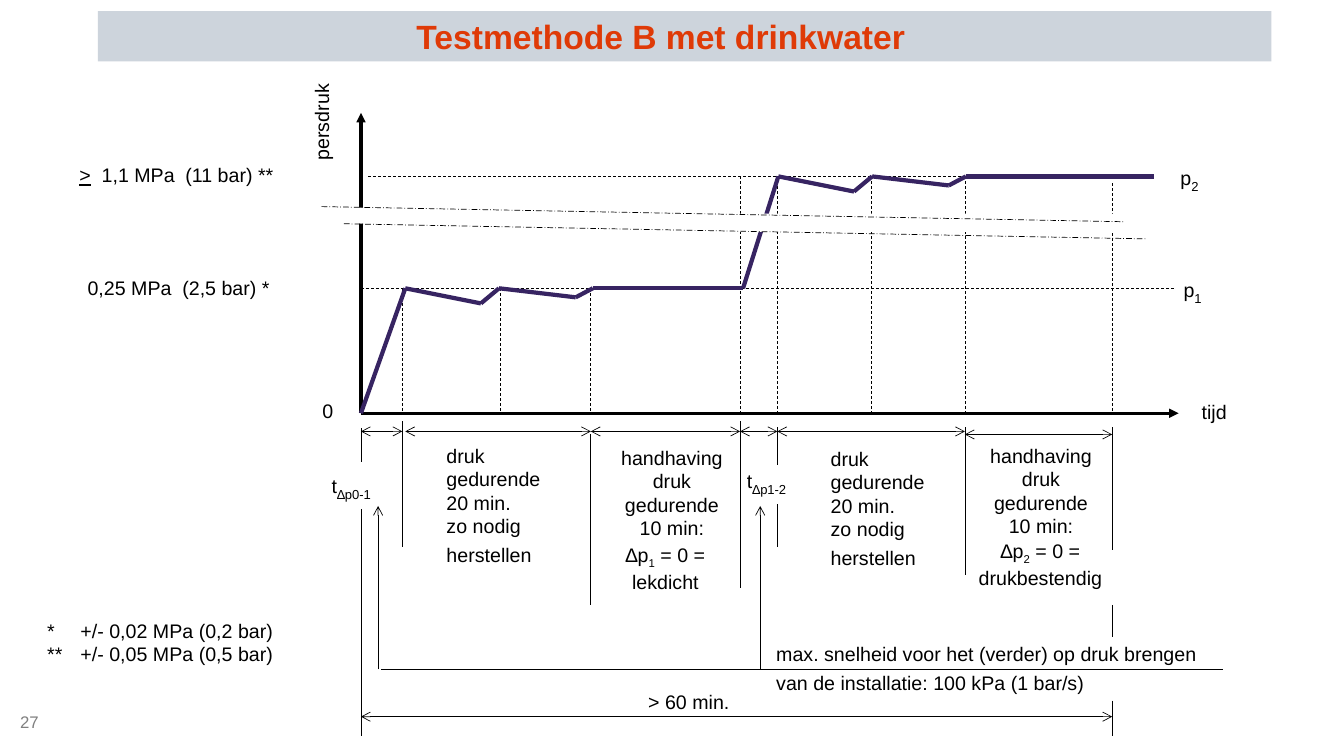
from dataclasses import dataclass

from lxml import etree
from pptx import Presentation
from pptx.dml.color import RGBColor
from pptx.enum.dml import MSO_LINE
from pptx.enum.shapes import MSO_CONNECTOR, MSO_SHAPE
from pptx.enum.text import MSO_ANCHOR, PP_ALIGN
from pptx.oxml.ns import qn
from pptx.util import Inches, Pt

LEFT, CENTER = PP_ALIGN.LEFT, PP_ALIGN.CENTER
TOP, MIDDLE = MSO_ANCHOR.TOP, MSO_ANCHOR.MIDDLE
DASH, LONG_DASH_DOT = MSO_LINE.DASH, MSO_LINE.LONG_DASH_DOT


@dataclass(frozen=True)
class Theme:
    font: str = "Arial"
    ink: str = "000000"
    paper: str = "FFFFFF"
    bar: str = "CDD4DC"
    title: str = "DF3A07"
    curve: str = "372462"
    muted: str = "808080"
    title_pt: int = 24
    body_pt: int = 14
    sub_pt: int = 16
    page_pt: int = 12
    hair: float = 0.5
    axis: float = 2.25
    bold: float = 3


THEME = Theme()

TITLE = "Testmethode B met drinkwater"
PAGE = "27"
RESTORE = ["druk", "gedurende", "20 min.", "zo nodig", "herstellen"]
HOLD = ["handhaving", "druk", "gedurende", "10 min:"]
SPEED = ["max. snelheid voor het (verder) op druk brengen",
         "van de installatie: 100 kPa (1 bar/s)"]
NOTES = ["*\t+/- 0,02 MPa (0,2 bar)", "**\t+/- 0,05 MPa (0,5 bar)"]

START, FULL_1, REFILL_1, HOLD_1 = 3.58, 3.99, 4.96, 5.86
RISE, FULL_2, REFILL_2, HOLD_2, END = 7.34, 7.71, 8.64, 9.57, 11.03
ZERO, LOW, HIGH = 4.1, 2.86, 1.75
SPAN_Y, SPEED_Y, TOTAL_Y = 4.28, 6.64, 7.11
DIPS = [(0, 0), (0.75, 0.15), (0.93, 0), (1.69, 0.09), (1.86, 0)]

CURVE = ([(START, ZERO)] + [(4.02 + dx, LOW + dy) for dx, dy in DIPS] + [(7.37, LOW)]
         + [(7.72 + dx, HIGH + dy) for dx, dy in DIPS] + [(11.45, HIGH)])

LEVELS = [(START, 11.64, LOW), (3.65, 9.69, HIGH)]
GUIDES = [(FULL_1, LOW), (REFILL_1, LOW), (HOLD_1, LOW), (RISE, HIGH),
          (FULL_2, HIGH), (REFILL_2, HIGH), (HOLD_2, HIGH), (END, 1.82)]
TICKS = [(START, 4.25, 4.58), (START, 5.05, 7.3), (FULL_1, 4.18, 5.43),
         (HOLD_1, 4.31, 6), (RISE, 4.18, 5.83), (FULL_2, 4.24, 4.61),
         (FULL_2, 5, 5.43), (HOLD_2, 4.24, 5.7), (END, 4.24, 5.46),
         (END, 6, 6.32), (END, 6.95, 7.3)]
SPANS = [(START, FULL_1, SPAN_Y), (4.02, HOLD_1, SPAN_Y), (HOLD_1, RISE, SPAN_Y),
         (RISE, FULL_2, SPAN_Y), (FULL_2, HOLD_2, SPAN_Y), (HOLD_2, END, 4.31),
         (START, END, TOTAL_Y)]
POINTERS = [3.75, 7.54]
BREAK_COVERS = [(3.44, 2.06, 0.41, 0.16), (7, 2.12, 4.69, 0.18)]
BREAKS = [(3.19, 2.05), (3.41, 2.22)]

LABELS = [
    ((0.69, 1.57, 2.2, 0.34), [[(">", "u"), ("\t1,1 MPa\t(11 bar) **", "")]],
     {"tabs": (0.22, 1.05)}),
    ((0.77, 2.69, 2.1, 0.34), ["0,25 MPa\t(2,5 bar) *"], {"tabs": (0.94,)}),
    ((2.68, 1.01, 1.02, 0.34), ["persdruk"], {"turn": 270}),
    ((3.1, 3.91, 0.35, 0.34), ["0"], {}),
    ((11.82, 3.92, 0.6, 0.34), ["tijd"], {}),
    ((11.64, 2.68, 0.5, 0.34), [[("p", ""), ("1", "s")]], {}),
    ((11.61, 1.57, 0.5, 0.34), [[("p", ""), ("2", "s")]], {}),
    ((3.19, 4.63, 0.75, 0.34), [[("t", ""), ("∆p0-1", "s")]], {}),
    ((7.31, 4.58, 1.04, 0.34), [[("t", ""), ("∆p1-2", "s")]], {}),
    ((4.33, 4.35, 1.32, 1.35), RESTORE, {"last_gap": 4}),
    ((8.14, 4.38, 1.32, 1.35), RESTORE, {"last_gap": 4}),
    ((6.03, 4.37, 1.27, 1.04), HOLD, {"align": CENTER}),
    ((9.69, 4.35, 1.27, 1.04), HOLD, {"align": CENTER}),
    ((6.07, 5.34, 1.06, 0.57), [[("∆p", ""), ("1", "d"), (" = 0 =", "")], "lekdicht"],
     {"align": CENTER}),
    ((9.47, 5.3, 1.7, 0.57), [[("∆p", ""), ("2", "d"), (" = 0 =", "")], "drukbestendig"],
     {"align": CENTER}),
    ((7.6, 6.32, 4.39, 0.64), SPEED, {"last_gap": 4}),
    ((6.33, 6.8, 1.15, 0.34), ["> 60 min."], {}),
    ((0.37, 6.09, 2.6, 0.57), NOTES, {"tabs": (0.33,)}),
]


def rgb(code):
    return RGBColor.from_string(code)


def style(r, size, color, bold=False):
    r.font.name, r.font.size, r.font.bold = THEME.font, Pt(size), bold
    r.font.color.rgb = rgb(color)


def add_line(shapes, start, end, color=THEME.ink, width=THEME.hair, dash=None,
             head=None, tail=None):
    cx = shapes.add_connector(MSO_CONNECTOR.STRAIGHT, *map(Inches, start + end))
    cx.line.color.rgb, cx.line.width = rgb(color), Pt(width)
    if dash:
        cx.line.dash_style = dash
    ln = cx.line._get_or_add_ln()
    for tag, kind in (("a:headEnd", head), ("a:tailEnd", tail)):
        if kind:
            etree.SubElement(ln, qn(tag)).set("type", kind)
    etree.SubElement(cx._element.spPr, qn("a:effectLst"))


def add_block(shapes, box, color):
    sp = shapes.add_shape(MSO_SHAPE.RECTANGLE, *map(Inches, box))
    sp.shadow.inherit = False
    sp.fill.solid()
    sp.fill.fore_color.rgb = rgb(color)
    sp.line.fill.background()
    return sp


def add_label(shapes, box, lines, align=LEFT, tabs=(), last_gap=0, turn=0,
              size=THEME.body_pt, color=THEME.ink, anchor=TOP):
    sp = shapes.add_textbox(*map(Inches, box))
    sp.rotation = turn
    tf = sp.text_frame
    tf.word_wrap, tf.vertical_anchor = True, anchor
    for i, line in enumerate(lines):
        p = tf.add_paragraph() if i else tf.paragraphs[0]
        p.alignment = align
        if last_gap and i == len(lines) - 1:
            p.space_before = Pt(last_gap)
        if tabs:
            tab_list = etree.SubElement(p._p.get_or_add_pPr(), qn("a:tabLst"))
            for pos in tabs:
                etree.SubElement(tab_list, qn("a:tab"), pos=str(Inches(pos)), algn="l")
        for text, mark in [(line, "")] if isinstance(line, str) else line:
            r = p.add_run()
            r.text = text
            style(r, THEME.sub_pt if mark == "s" else size, color)
            if mark == "u":
                r.font.underline = True
            elif mark:
                r._r.get_or_add_rPr().set("baseline", "-25000")
    return tf


def add_title(slide):
    bar = add_block(slide.shapes, (0.97, 0.11, 11.64, 0.5), THEME.bar)
    slide.shapes._spTree.insert(2, bar._element)
    sp = slide.shapes.title
    sp.left, sp.top, sp.width, sp.height = map(Inches, (4.03, 0.11, 5.19, 0.5))
    tf = sp.text_frame
    tf.text = TITLE
    tf.vertical_anchor = MIDDLE
    tf.paragraphs[0].alignment = LEFT
    style(tf.paragraphs[0].runs[0], THEME.title_pt, THEME.title, True)


def add_graph(shapes):
    for x0, x1, y in LEVELS:
        add_line(shapes, (x0, y), (x1, y), dash=DASH)
    for x, top in GUIDES:
        add_line(shapes, (x, top), (x, ZERO), dash=DASH)
    for end in ((START, 1.12), (11.69, ZERO)):
        add_line(shapes, (START, ZERO), end, width=THEME.axis, tail="triangle")
    for start, end in zip(CURVE, CURVE[1:]):
        add_line(shapes, start, end, THEME.curve, THEME.bold)
    for box in BREAK_COVERS:
        add_block(shapes, box, THEME.paper)
    for x, y in BREAKS:
        add_line(shapes, (x, y), (x + 7.95, y + 0.15), dash=LONG_DASH_DOT)


def add_phases(shapes):
    for x, top, bottom in TICKS:
        add_line(shapes, (x, top), (x, bottom))
    for x0, x1, y in SPANS:
        add_line(shapes, (x0, y), (x1, y), head="arrow", tail="arrow")
    for x in POINTERS:
        add_line(shapes, (x, SPEED_Y), (x, 5.02), tail="arrow")
    add_line(shapes, (3.78, SPEED_Y), (12.13, SPEED_Y))


def main():
    prs = Presentation()
    prs.slide_width, prs.slide_height = Inches(13.33), Inches(7.5)
    slide = prs.slides.add_slide(prs.slide_layouts[5])
    add_title(slide)
    add_graph(slide.shapes)
    add_phases(slide.shapes)
    for box, lines, options in LABELS:
        add_label(slide.shapes, box, lines, **options)
    tf = add_label(slide.shapes, (0.2, 6.96, 0.71, 0.4), [PAGE], size=THEME.page_pt,
                   color=THEME.muted, anchor=MIDDLE)
    tf.margin_left = tf.margin_right = tf.margin_top = tf.margin_bottom = 0
    prs.save("out.pptx")


if __name__ == "__main__":
    main()
